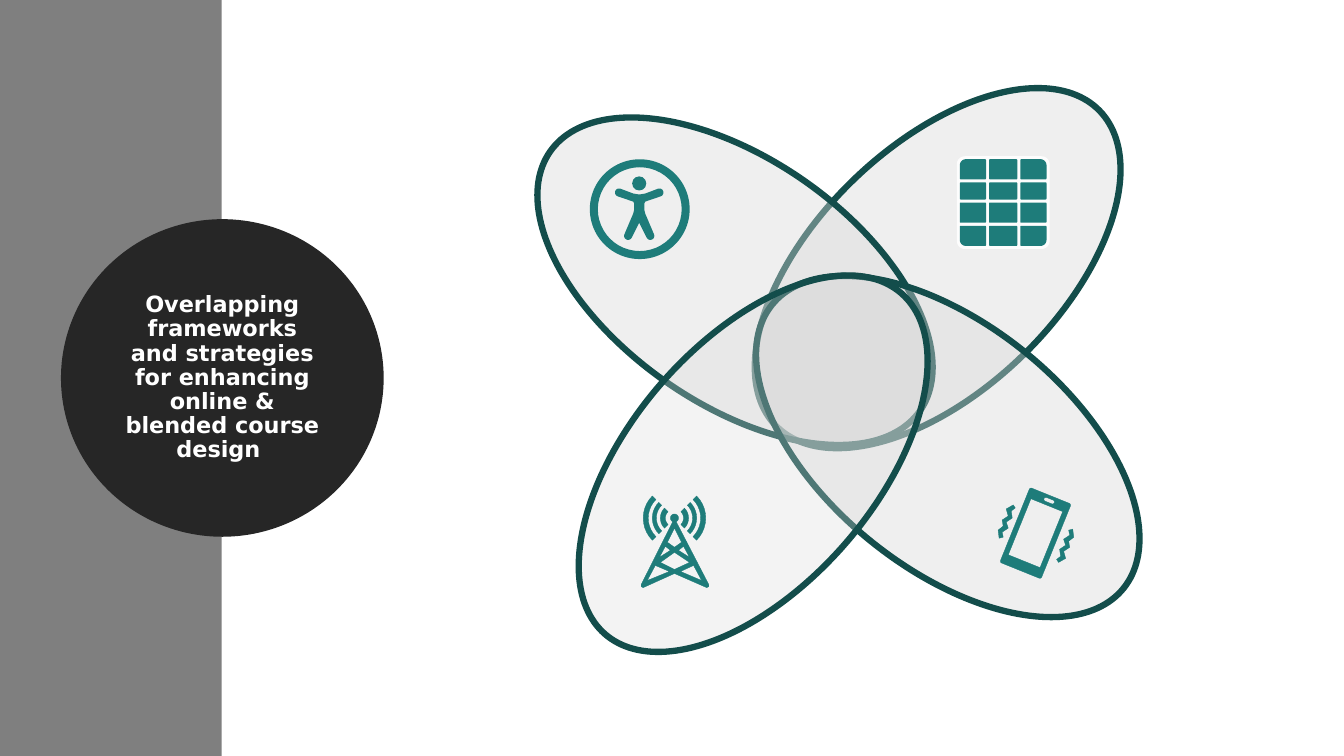
from dataclasses import dataclass
from itertools import accumulate
from math import cos, radians, sin

from pptx import Presentation
from pptx.dml.color import RGBColor
from pptx.enum.shapes import MSO_SHAPE
from pptx.enum.text import MSO_ANCHOR, MSO_AUTO_SIZE, PP_ALIGN
from pptx.oxml import parse_xml
from pptx.oxml.ns import nsdecls, qn
from pptx.shapes.autoshape import Shape
from pptx.shapes.shapetree import GroupShapes, SlideShapes
from pptx.util import Emu, Pt

PX = 9144  # EMU per px, 100 px to the inch
FONT = "DejaVu Sans"
GREY = RGBColor(0x7F, 0x7F, 0x7F)
BLACK = RGBColor(0x26, 0x26, 0x26)
WHITE = RGBColor(0xFF, 0xFF, 0xFF)
PETAL = RGBColor(0xD9, 0xD9, 0xD9)
OUTLINE = RGBColor(0x13, 0x4D, 0x4B)
TEAL = RGBColor(0x1E, 0x7C, 0x7A)
TILE = RGBColor(0xFD, 0xFD, 0xFD)

Point = tuple[float, float]
Contour = list[Point]
Shapes = SlideShapes | GroupShapes


@dataclass
class Petal:
    left: int
    top: int
    rotation: float
    opacity: int


@dataclass
class Box:
    left: int
    top: int
    width: int
    height: int
    # corner radii: top left, top right, bottom right, bottom left
    radii: tuple[int, int, int, int]


PETALS = [
    Petal(706, 145, 315.8, 40),
    Petal(505, 158, 35.1, 40),
    Petal(716, 322, 38.9, 40),
    Petal(523, 339, 311, 30),
]


def px(n: float) -> Emu:
    return Emu(round(n * PX))


def paint(shape: Shape, fill: RGBColor, line: RGBColor | None = None, width: float = 0) -> None:
    shape.shadow.inherit = False
    shape.fill.solid()
    shape.fill.fore_color.rgb = fill
    if line is None:
        shape.line.fill.background()
    else:
        shape.line.color.rgb = line
        shape.line.width = Pt(width)


def add_preset(shapes: Shapes, kind: MSO_SHAPE, left: int, top: int, width: int, height: int) -> Shape:
    return shapes.add_shape(kind, px(left), px(top), px(width), px(height))


def add_outline(shapes: Shapes, contours: list[Contour], fill: RGBColor = TEAL,
                line: RGBColor | None = None) -> Shape:
    scaled = [[(px(x), px(y)) for x, y in contour] for contour in contours]
    builder = shapes.build_freeform(*scaled[0][0], scale=1.0)
    for i, contour in enumerate(scaled):
        if i:
            builder.move_to(*contour[0])
        builder.add_line_segments(contour[1:], close=True)
    shape = builder.convert_to_shape()
    paint(shape, fill, line, 0.25)
    return shape


def arc(cx: float, cy: float, r: float, start: float, end: float, steps: int = 10) -> Contour:
    angles = [radians(start + (end - start) * i / steps) for i in range(steps + 1)]
    return [(cx + r * cos(a), cy + r * sin(a)) for a in angles]


def box_contour(box: Box) -> Contour:
    right, bottom = box.left + box.width, box.top + box.height
    corners = [(box.left, box.top, 1, 1), (right, box.top, -1, 1),
               (right, bottom, -1, -1), (box.left, bottom, 1, -1)]
    points: Contour = []
    for i, ((x, y, dx, dy), r) in enumerate(zip(corners, box.radii)):
        start = 180 + 90 * i
        points += arc(x + dx * r, y + dy * r, r, start, start + 90) if r else [(x, y)]
    return points


def turn(points: Contour, cx: int, cy: int, degrees: float) -> Contour:
    c, sn = cos(radians(degrees)), sin(radians(degrees))
    return [(cx + x * c - y * sn, cy + x * sn + y * c) for x, y in points]


def add_petal(shapes: Shapes, petal: Petal) -> None:
    shape = add_preset(shapes, MSO_SHAPE.OVAL, petal.left, petal.top, 448, 242)
    shape.rotation = petal.rotation
    paint(shape, PETAL, OUTLINE, 4.5)
    color = shape._element.spPr.find(qn("a:solidFill"))[0]
    color.append(parse_xml(f'<a:alpha {nsdecls("a")} val="{petal.opacity * 1000}"/>'))


def add_title(shapes: SlideShapes) -> None:
    paint(add_preset(shapes, MSO_SHAPE.OVAL, 70, 227, 301, 296), BLACK, BLACK, 13.75)
    title = shapes.title
    title.left, title.top, title.width, title.height = px(114), px(270), px(213), px(210)
    shapes._spTree.append(title._element)  # bring above the circle
    tf = title.text_frame
    tf.margin_left = tf.margin_right = px(10)
    tf.word_wrap = True
    tf.auto_size = MSO_AUTO_SIZE.NONE
    tf.vertical_anchor = MSO_ANCHOR.MIDDLE
    p = tf.paragraphs[0]
    p.alignment = PP_ALIGN.CENTER
    p.line_spacing = 0.9
    p.space_after = Pt(6)
    r = p.add_run()
    r.text = "Overlapping frameworks and strategies for enhancing online & blended course design "
    r.font.name, r.font.size, r.font.bold = FONT, Pt(16), True
    r.font.color.rgb = WHITE


def add_phone(shapes: GroupShapes) -> None:
    boxes = [Box(-22, -40, 44, 80, (2,) * 4), Box(-17, -30, 34, 60, (0,) * 4),
             Box(-5, -37, 11, 4, (2,) * 4)]
    add_outline(shapes, [turn(box_contour(b), 1027, 529, 22) for b in boxes], line=TEAL)
    buzz = [(1050, 558), (1048, 555), (1052, 552), (1051, 545), (1057, 541), (1055, 535), (1061, 531),
            (1060, 526), (1064, 525), (1065, 533), (1060, 537), (1061, 543), (1055, 547), (1057, 554)]
    add_outline(shapes, [buzz], line=TEAL)
    add_outline(shapes, [[(2055 - x, 1059 - y) for x, y in buzz]], line=TEAL)


def add_tower(shapes: GroupShapes) -> None:
    for cx, facing in ((669, 180), (669, 0)):
        for inner, outer in ((9, 14), (18, 22), (26, 31)):
            wave = (arc(cx, 514, inner, facing - 45, facing + 45)
                    + arc(cx, 514, outer, facing + 45, facing - 45))
            add_outline(shapes, [wave], line=TEAL)
    mast = arc(669, 514, 4, 115, 425, 20) + [(703, 580), (703, 582), (701, 583), (669, 569),
                                            (638, 583), (636, 582), (636, 580)]
    gaps = [[(684, 553), (673, 546), (678, 542)], [(669, 524), (676, 538), (669, 543), (662, 538)],
            [(660, 542), (665, 546), (654, 553)], [(642, 576), (650, 561), (664, 567)],
            [(655, 558), (669, 548), (684, 558), (669, 565)], [(696, 576), (675, 567), (688, 561)]]
    add_outline(shapes, [mast] + gaps, line=TEAL)


def add_person(shapes: GroupShapes) -> None:
    half = ([(634, 193), (640, 192)] + arc(654, 191, 4, -108, 72)
            + [(640, 200), (639, 202), (639, 208), (640, 212)]
            + arc(645, 234, 4, -20, 155) + [(634, 221)])
    add_outline(shapes, [half + [(1268 - x, y) for x, y in reversed(half)]])
    paint(add_preset(shapes, MSO_SHAPE.OVAL, 627, 175, 14, 14), TEAL)
    ring = add_preset(shapes, MSO_SHAPE.DONUT, 585, 158, 99, 99)
    ring.adjustments[0] = 0.08
    paint(ring, TEAL)


def add_table_icon(shapes: GroupShapes) -> None:
    add_outline(shapes, [box_contour(Box(949, 155, 92, 92, (8,) * 4))], TILE)
    gap, widths, heights = 3, (26, 28, 26), (20, 17, 20, 20)
    lefts = accumulate(widths[:-1], lambda x, w: x + w + gap, initial=952)
    columns = list(zip(lefts, widths))
    tops = accumulate(heights[:-1], lambda y, h: y + h + gap, initial=158)
    rounded = {(0, 0): 0, (0, 2): 1, (3, 2): 2, (3, 0): 3}
    for row, (top, height) in enumerate(zip(tops, heights)):
        for col, (left, width) in enumerate(columns):
            big = rounded.get((row, col))
            radii = tuple(6 if i == big else 1 for i in range(4))
            add_outline(shapes, [box_contour(Box(left, top, width, height, radii))])


def main() -> None:
    prs = Presentation()
    prs.slide_width, prs.slide_height = px(1333), px(750)
    s = prs.slides.add_slide(prs.slide_layouts[5])  # title only

    # Side band and title circle
    paint(add_preset(s.shapes, MSO_SHAPE.RECTANGLE, 0, 0, 220, 750), GREY)
    add_title(s.shapes)

    # Overlapping petals
    for petal in PETALS:
        add_petal(s.shapes, petal)

    # One icon group per petal
    for add_icon in (add_phone, add_tower, add_person, add_table_icon):
        add_icon(s.shapes.add_group_shape().shapes)

    prs.save("out.pptx")


if __name__ == "__main__":
    main()
